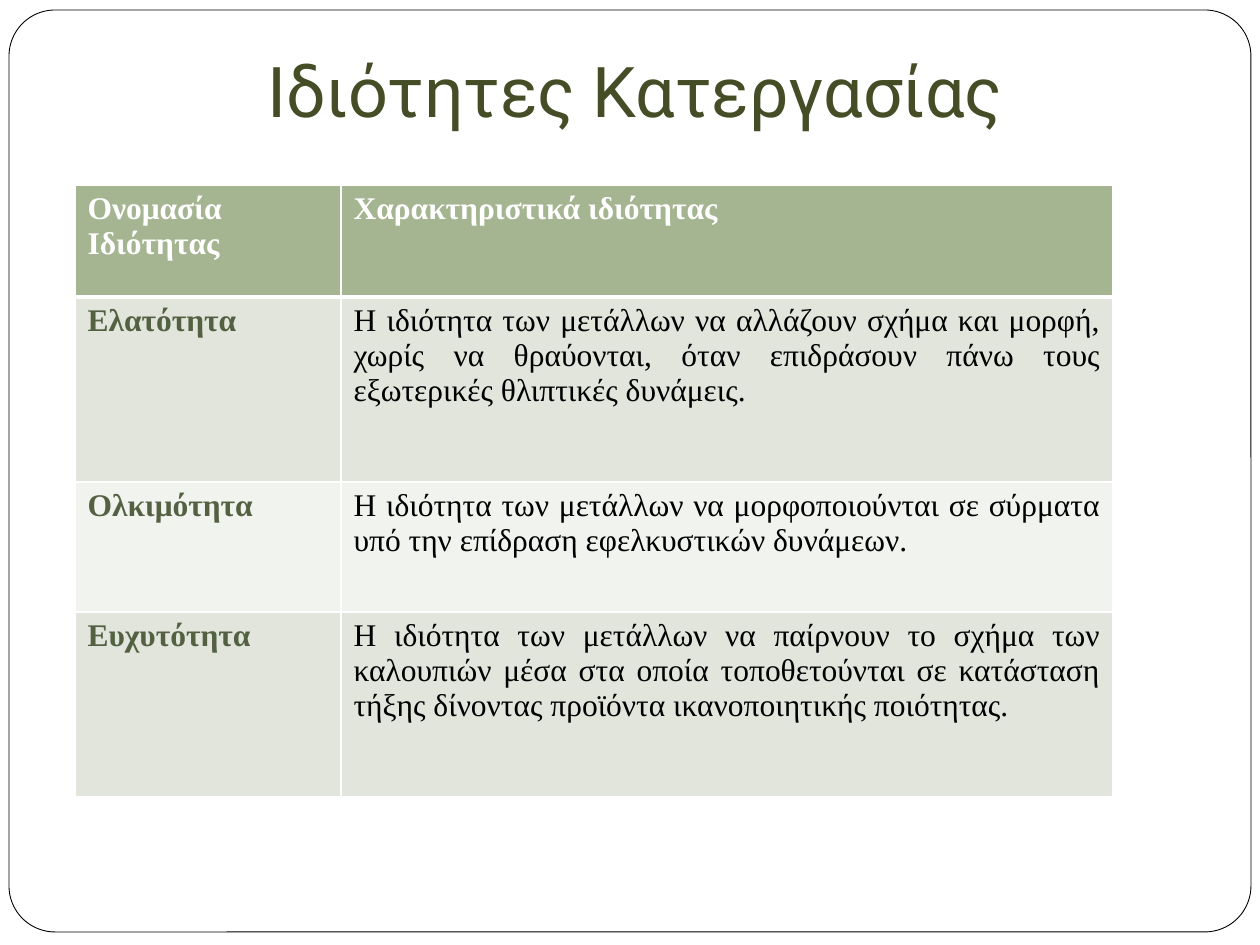
from pptx import Presentation
from pptx.dml.color import RGBColor
from pptx.enum.shapes import MSO_SHAPE as Shape
from pptx.enum.text import MSO_ANCHOR as Anchor, PP_ALIGN as Align
from pptx.oxml import parse_xml
from pptx.oxml.ns import nsdecls
from pptx.util import Pt

SCALE = 914400 / 126
COLORS = {
    "paper": "FFFFFF", "ink": "000000", "title": "444D26", "header": "A5B592",
    "name": "536142", "band_dark": "E1E5DC", "band_light": "F0F3EE",
}
HEADINGS = ("Ονομασία Ιδιότητας", "Χαρακτηριστικά ιδιότητας")
PROPERTIES = [
    ("Ελατότητα", "Η ιδιότητα των μετάλλων να αλλάζουν σχήμα και μορφή, χωρίς να "
     "θραύονται, όταν επιδράσουν πάνω τους εξωτερικές θλιπτικές δυνάμεις."),
    ("Ολκιμότητα", "Η ιδιότητα των μετάλλων να μορφοποιούνται σε σύρματα υπό την "
     "επίδραση εφελκυστικών δυνάμεων."),
    ("Ευχυτότητα", "Η ιδιότητα των μετάλλων να παίρνουν το σχήμα των καλουπιών μέσα "
     "στα οποία τοποθετούνται σε κατάσταση τήξης δίνοντας προϊόντα ικανοποιητικής "
     "ποιότητας."),
]


def px(length):
    """Turn pixels into EMU."""
    return round(length * SCALE)


def color(name):
    """Look up a named colour."""
    return RGBColor.from_string(COLORS[name])


def write(frame, text, *, size=18, font="Times New Roman", ink="ink", bold=False,
          align=Align.LEFT):
    """Put one formatted paragraph into a text frame."""
    para = frame.paragraphs[0]
    para.alignment = align
    span = para.add_run()
    span.text = text
    span.font.size = Pt(size)
    span.font.name = font
    span.font.bold = bold
    span.font.color.rgb = color(ink)


def add_frame(page, box):
    """Draw the rounded border of the page."""
    border = page.shapes.add_shape(Shape.ROUNDED_RECTANGLE, *map(px, box))
    border.adjustments[0] = 0.05
    border.shadow.inherit = False
    border.fill.solid()
    border.fill.fore_color.rgb = color("paper")
    border.line.color.rgb = color("ink")
    border.line.width = Pt(0.5)


def add_title(page, box):
    """Write the slide title at the bottom of its box."""
    frame = page.shapes.add_textbox(*map(px, box)).text_frame
    frame.word_wrap = True
    frame.vertical_anchor = Anchor.BOTTOM
    frame.margin_bottom = px(13)
    write(frame, "Ιδιότητες Κατεργασίας", size=40, font="Roboto", ink="title",
          align=Align.CENTER)


def style_cell(cell, fill, top=1, bottom=1):
    """Give a cell its white borders and its fill."""
    properties = cell._tc.get_or_add_tcPr()
    for side, width in {"L": 1, "R": 1, "T": top, "B": bottom}.items():
        properties.append(parse_xml(
            f'<a:ln{side} {nsdecls("a")} w="{Pt(width)}"><a:solidFill>'
            f'<a:srgbClr val="{COLORS["paper"]}"/></a:solidFill></a:ln{side}>'))
    cell.fill.solid()
    cell.fill.fore_color.rgb = color(fill)


def add_property_table(page, box, widths, heights):
    """Fill the table of properties under its header row."""
    table = page.shapes.add_table(len(heights), len(widths), *map(px, box)).table
    for column, width in zip(table.columns, widths):
        column.width = px(width)
    for row, height in zip(table.rows, heights):
        row.height = px(height)
    for cell, heading in zip(table.rows[0].cells, HEADINGS):
        style_cell(cell, "header", bottom=3)
        write(cell.text_frame, heading, ink="paper", bold=True)
    for index, (name, description) in enumerate(PROPERTIES, 1):
        name_cell, description_cell = table.rows[index].cells
        for cell in (name_cell, description_cell):
            style_cell(cell, "band_dark" if index % 2 else "band_light",
                       top=3 if index == 1 else 1)
        write(name_cell.text_frame, name, ink="name", bold=True)
        write(description_cell.text_frame, description, align=Align.JUSTIFY)


def main():
    """Build and save the deck."""
    deck = Presentation()
    deck.slide_width, deck.slide_height = px(1260), px(945)
    page = deck.slides.add_slide(deck.slide_layouts[6])
    add_frame(page, (9, 10, 1242, 922))
    add_title(page, (243, -14, 784, 158))
    add_property_table(page, (75, 185, 1038, 612), (266, 772), (112, 185, 130, 185))
    deck.save("out.pptx")


if __name__ == "__main__":
    main()
